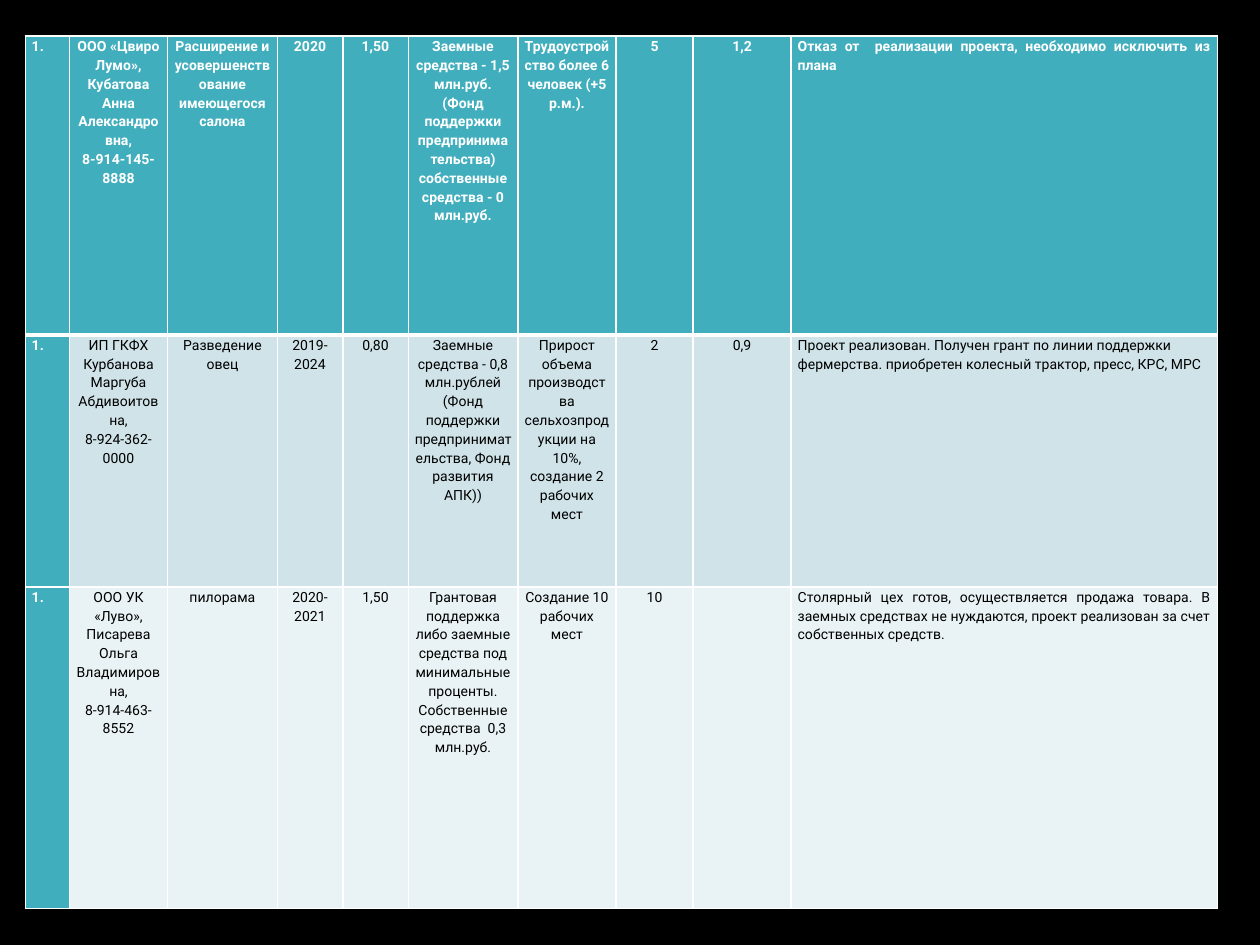
from dataclasses import dataclass

from lxml import etree
from pptx import Presentation
from pptx.dml.color import RGBColor
from pptx.enum.text import PP_ALIGN
from pptx.oxml.ns import qn
from pptx.util import Cm, Pt

LEFT, CENTER, JUSTIFY = PP_ALIGN.LEFT, PP_ALIGN.CENTER, PP_ALIGN.JUSTIFY
FONT = "Roboto"
COLORS = {
    "background": "000000",
    "accent": "41AEBD",
    "band_dark": "CFE3E8",
    "band_light": "E9F2F4",
    "white": "FFFFFF",
    "text": "000000",
}
COL_WIDTHS = (0.89, 1.98, 2.21, 1.32, 1.32, 2.21, 1.98, 1.55, 1.98, 8.59)
THIN, THICK = 1, 3


@dataclass
class ProjectRow:
    height: float
    fill: str
    values: tuple[str, ...]
    status_align: PP_ALIGN
    header: bool = False
    top: int = THIN
    bottom: int = THIN


ROWS = (
    ProjectRow(6.02, "accent", (
        "1.",
        "ООО «Цвиро Лумо»,\nКубатова Анна Александровна,\n8-914-145-8888",
        "Расширение и усовершенствование имеющегося салона",
        "2020",
        "1,50",
        "Заемные средства - 1,5 млн.руб. (Фонд поддержки предпринимательства) "
        "собственные средства - 0 млн.руб.",
        "Трудоустройство более 6 человек (+5 р.м.).",
        "5",
        "1,2",
        "Отказ от  реализации проекта, необходимо исключить из плана",
    ), JUSTIFY, header=True, bottom=THICK),
    ProjectRow(5.08, "band_dark", (
        "1.",
        "ИП ГКФХ Курбанова Маргуба Абдивоитовна,\n8-924-362-0000",
        "Разведение овец",
        "2019-2024",
        "0,80",
        "Заемные средства - 0,8 млн.рублей (Фонд поддержки "
        "предпринимательства, Фонд развития АПК))",
        "Прирост объема производства сельхозпродукции на 10%, "
        "создание 2 рабочих мест",
        "2",
        "0,9",
        "Проект реализован. Получен грант по линии поддержки фермерства. "
        "приобретен колесный трактор, пресс, КРС, МРС",
    ), LEFT, top=THICK),
    ProjectRow(6.48, "band_light", (
        "1.",
        "ООО УК «Луво»,\nПисарева Ольга Владимировна,\n8-914-463-8552",
        "пилорама",
        "2020-2021",
        "1,50",
        "Грантовая поддержка либо заемные средства под минимальные проценты. "
        "Собственные средства  0,3 млн.руб.",
        "Создание 10 рабочих мест",
        "10",
        "",
        "Столярный цех готов, осуществляется продажа товара. В заемных "
        "средствах не нуждаются, проект реализован за счет собственных средств.",
    ), JUSTIFY),
)


def rgb(name: str) -> RGBColor:
    return RGBColor.from_string(COLORS[name])


def set_borders(cell, top: int, bottom: int) -> None:
    """Give the cell white borders; the line elements must precede its fill."""
    props = cell._tc.get_or_add_tcPr()
    sides = (("lnL", THIN), ("lnR", THIN), ("lnT", top), ("lnB", bottom))
    for i, (side, width) in enumerate(sides):
        ln = etree.Element(qn(f"a:{side}"), w=str(Pt(width)))
        fill = etree.SubElement(ln, qn("a:solidFill"))
        etree.SubElement(fill, qn("a:srgbClr"), val=COLORS["white"])
        props.insert(i, ln)


def fill_cell(cell, text: str, fill: str, align: PP_ALIGN, strong: bool) -> None:
    cell.fill.solid()
    cell.fill.fore_color.rgb = rgb(fill)
    cell.margin_left = cell.margin_right = Cm(0.13)
    cell.margin_top = cell.margin_bottom = 0
    p = cell.text_frame.paragraphs[0]
    p.text = text
    p.alignment = align
    p.line_spacing = 1.15
    p.font.name = FONT
    p.font.size = Pt(8)
    p.font.bold = strong
    p.font.color.rgb = rgb("white" if strong else "text")


def add_project_table(s, rows: tuple[ProjectRow, ...]) -> None:
    table = s.shapes.add_table(
        len(rows), len(COL_WIDTHS), Cm(0.51), Cm(0.73),
        Cm(sum(COL_WIDTHS)), Cm(sum(row.height for row in rows)),
    ).table
    table.first_col = True
    for column, width in zip(table.columns, COL_WIDTHS):
        column.width = Cm(width)
    last = len(COL_WIDTHS) - 1
    for r, row in enumerate(rows):
        table.rows[r].height = Cm(row.height)
        for c, text in enumerate(row.values):
            cell = table.cell(r, c)
            align = {0: LEFT, last: row.status_align}.get(c, CENTER)
            fill = "accent" if c == 0 else row.fill
            fill_cell(cell, text, fill, align, row.header or c == 0)
            set_borders(cell, row.top, row.bottom)


def main() -> None:
    prs = Presentation()
    prs.slide_width, prs.slide_height = Cm(25.4), Cm(19.05)
    s = prs.slides.add_slide(prs.slide_layouts[6])
    s.background.fill.solid()
    s.background.fill.fore_color.rgb = rgb("background")
    add_project_table(s, ROWS)
    prs.save("out.pptx")


if __name__ == "__main__":
    main()
